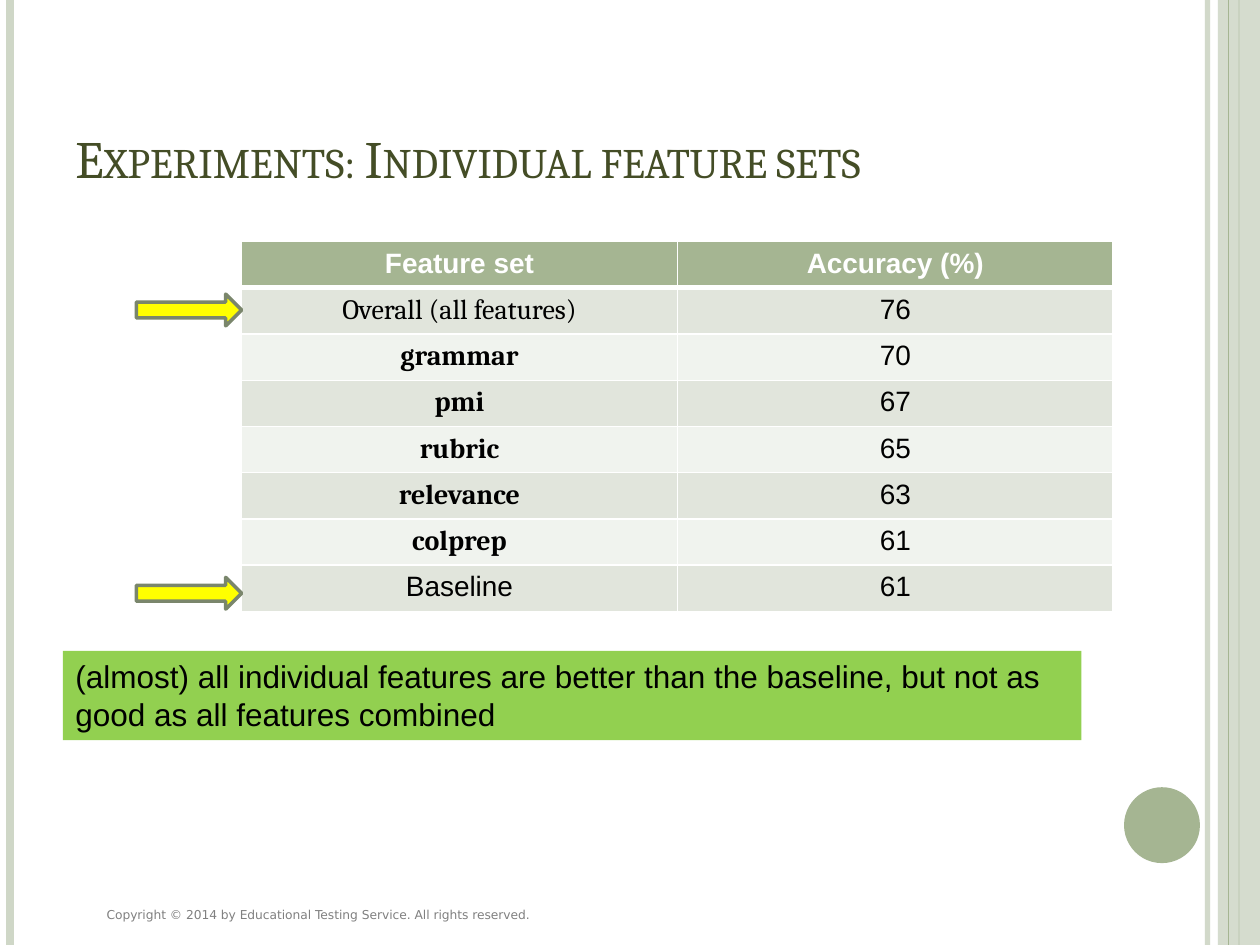
from lxml import etree
from pptx import Presentation
from pptx import util as u
from pptx.dml.color import RGBColor
from pptx.enum import shapes, text
from pptx.oxml import ns

SAGE = RGBColor(0xA5, 0xB5, 0x92)
PALE_SAGE = RGBColor(0xCF, 0xD7, 0xC7)
OLIVE = RGBColor(0x44, 0x4D, 0x26)
ARROW_EDGE = RGBColor(0x7A, 0x86, 0x6C)
BAND_DARK = RGBColor(0xE1, 0xE5, 0xDC)
BAND_LIGHT = RGBColor(0xF0, 0xF3, 0xEE)
LIME = RGBColor(0x92, 0xD0, 0x50)
YELLOW = RGBColor(0xFF, 0xFF, 0x00)
GRAY = RGBColor(0x80, 0x80, 0x80)
BLACK = RGBColor(0, 0, 0)
WHITE = RGBColor(0xFF, 0xFF, 0xFF)

WIDTH, HEIGHT = u.Cm(25.4), u.Cm(19.05)
ROW_HEIGHT = u.Cm(0.9)
RESULTS = [
    ("Feature set", "Accuracy (%)"),
    ("Overall (all features)", "76"),
    ("grammar", "70"),
    ("pmi", "67"),
    ("rubric", "65"),
    ("relevance", "63"),
    ("colprep", "61"),
    ("Baseline", "61"),
]


def set_alpha(element, percent):
    for color in element.iter(ns.qn("a:srgbClr")):
        etree.SubElement(color, ns.qn("a:alpha"), val=str(percent * 1000))


def write(frame, content, size, font, color, bold=False):
    frame.text = content
    frame.word_wrap = True
    paragraph = frame.paragraphs[0]
    paragraph.alignment = text.PP_ALIGN.LEFT
    run = paragraph.runs[0]
    run.font.size = u.Pt(size)
    run.font.name = font
    run.font.bold = bold
    run.font.color.rgb = color
    return run


def add_filled_shape(slide, kind, box, fill):
    shape = slide.shapes.add_shape(kind, *box)
    shape.shadow.inherit = False
    shape.fill.solid()
    shape.fill.fore_color.rgb = fill
    shape.line.fill.background()
    return shape


def add_vertical_line(slide, x, color, width):
    line = slide.shapes.add_connector(shapes.MSO_CONNECTOR.STRAIGHT, x, 0, x, HEIGHT)
    line.line.color.rgb = color
    line.line.width = u.Pt(width)
    etree.SubElement(line._element.spPr, ns.qn("a:effectLst"))
    return line


def add_frame(slide, left, top, width, height):
    """Draw the side rules, the right band and the disc within the box."""
    right = left + width
    inner_rule = add_vertical_line(slide, right - u.Cm(1.06), PALE_SAGE, 3)
    set_alpha(inner_rule._element.spPr, 93)
    add_vertical_line(slide, left + u.Cm(0.21), PALE_SAGE, 4.5)
    add_vertical_line(slide, right - u.Cm(0.42), SAGE, 1.5)
    band_width = u.Cm(0.85)
    band = add_filled_shape(slide, shapes.MSO_SHAPE.RECTANGLE,
                            (right - band_width, top, band_width, height), PALE_SAGE)
    set_alpha(band._element.spPr, 87)
    add_vertical_line(slide, right - u.Cm(0.64), SAGE, 0.75)
    diameter = u.Cm(1.53)
    add_filled_shape(slide, shapes.MSO_SHAPE.OVAL,
                     (right - u.Cm(2.74), top + u.Cm(15.87), diameter, diameter), SAGE)


def add_copyright(slide, *box):
    frame = slide.shapes.add_textbox(*box).text_frame
    write(frame, "Copyright © 2014 by Educational Testing Service. All rights reserved.",
          7, "DejaVu Sans", GRAY)


def add_title(slide, *box):
    frame = slide.shapes.add_textbox(*box).text_frame
    frame.vertical_anchor = text.MSO_ANCHOR.BOTTOM
    run = write(frame, "Experiments: Individual feature sets", 30, "Cambria", OLIVE)
    run._r.get_or_add_rPr().set("cap", "small")


def set_borders(cell, top, bottom):
    properties = cell._tc.get_or_add_tcPr()
    widths = {"lnL": 1, "lnR": 1, "lnT": top, "lnB": bottom}
    for position, (side, width) in enumerate(widths.items()):
        border = etree.Element(ns.qn(f"a:{side}"), w=str(u.Pt(width)))
        fill = etree.SubElement(border, ns.qn("a:solidFill"))
        etree.SubElement(fill, ns.qn("a:srgbClr"), val=str(WHITE))
        properties.insert(position, border)


def add_results_table(slide, left, top, width):
    table = slide.shapes.add_table(len(RESULTS), 2, left, top, width,
                                   ROW_HEIGHT * len(RESULTS)).table
    last = len(RESULTS) - 1
    for i, row in enumerate(RESULTS):
        table.rows[i].height = ROW_HEIGHT
        header = i == 0
        fill = SAGE if header else (BAND_DARK if i % 2 else BAND_LIGHT)
        for j, content in enumerate(row):
            cell = table.cell(i, j)
            cell.fill.solid()
            cell.fill.fore_color.rgb = fill
            set_borders(cell, top=3 if i == 1 else 1, bottom=3 if header else 1)
            named_feature = j == 0 and 0 < i < last
            write(cell.text_frame, content, 16,
                  "Cambria" if named_feature else "Arial",
                  WHITE if header else BLACK,
                  bold=header or (named_feature and i > 1))
            cell.text_frame.paragraphs[0].alignment = text.PP_ALIGN.CENTER


def add_arrow(slide, *box):
    arrow = add_filled_shape(slide, shapes.MSO_SHAPE.RIGHT_ARROW, box, YELLOW)
    arrow.line.color.rgb = ARROW_EDGE
    arrow.line.width = u.Pt(2)


def add_conclusion(slide, *box):
    shape = add_filled_shape(slide, shapes.MSO_SHAPE.RECTANGLE, box, LIME)
    shape.text_frame.vertical_anchor = text.MSO_ANCHOR.TOP
    write(shape.text_frame,
          "(almost) all individual features are better than the baseline, "
          "but not as good as all features combined", 18, "Arial", BLACK)


def main():
    presentation = Presentation()
    presentation.slide_width, presentation.slide_height = WIDTH, HEIGHT
    slide = presentation.slides.add_slide(presentation.slide_layouts[6])
    add_frame(slide, 0, 0, WIDTH, HEIGHT)
    add_copyright(slide, u.Cm(1.9), u.Cm(18.16), u.Cm(15.88), u.Cm(0.55))
    add_title(slide, u.Cm(1.27), u.Cm(0.76), u.Cm(20.75), u.Cm(3.18))
    add_results_table(slide, u.Cm(4.87), u.Cm(4.87), u.Cm(17.57))
    add_conclusion(slide, u.Cm(1.27), u.Cm(13.12), u.Cm(20.53), u.Cm(1.8))
    for top in (u.Cm(5.93), u.Cm(11.64)):
        add_arrow(slide, u.Cm(2.75), top, u.Cm(2.12), u.Cm(0.64))
    presentation.save("out.pptx")


if __name__ == "__main__":
    main()
